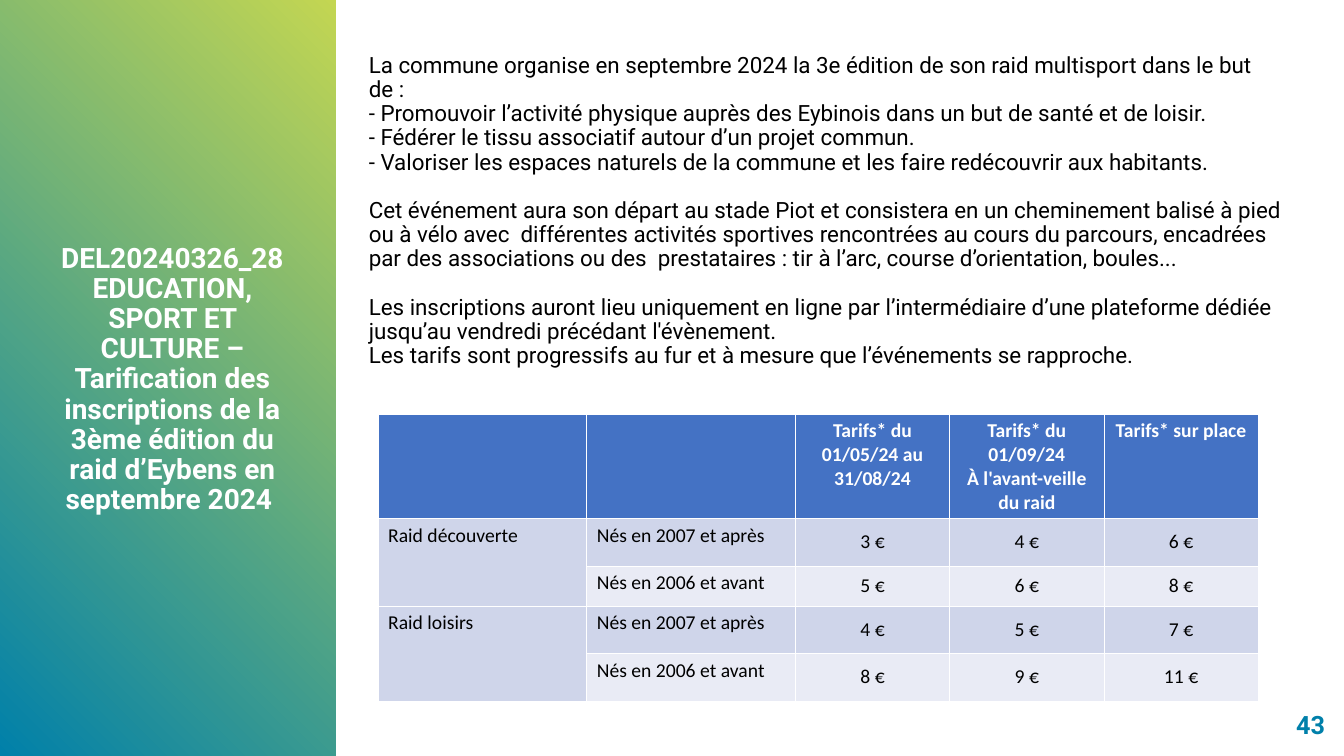
from lxml import etree
from pptx import Presentation
from pptx.dml.color import RGBColor
from pptx.enum.shapes import MSO_SHAPE
from pptx.enum.text import MSO_ANCHOR, PP_ALIGN
from pptx.oxml.ns import qn
from pptx.util import Inches, Pt

LEFT, CENTER, RIGHT = PP_ALIGN.LEFT, PP_ALIGN.CENTER, PP_ALIGN.RIGHT
TOP, MIDDLE = MSO_ANCHOR.TOP, MSO_ANCHOR.MIDDLE

BLUE = RGBColor(0x00, 0x80, 0xAA)
LIME = RGBColor(0xC3, 0xD6, 0x52)
WHITE = RGBColor(0xFF, 0xFF, 0xFF)
BLACK = RGBColor(0x00, 0x00, 0x00)
HEADER_BLUE = RGBColor(0x44, 0x72, 0xC4)
BAND_DARK = RGBColor(0xCF, 0xD5, 0xEA)
BAND_LIGHT = RGBColor(0xE9, 0xEB, 0xF5)

TITLE = ("DEL20240326_28 EDUCATION, SPORT ET CULTURE – Tarification des inscriptions "
         "de la 3ème édition du raid d’Eybens en septembre 2024 ")
PAGE_NUMBER = "43"
SECTIONS = [
    ["La commune organise en septembre 2024 la 3e édition de son raid multisport dans le but de :",
     "- Promouvoir l’activité physique auprès des Eybinois dans un but de santé et de loisir.",
     "- Fédérer le tissu associatif autour d’un projet commun.",
     "- Valoriser les espaces naturels de la commune et les faire redécouvrir aux habitants."],
    ["Cet événement aura son départ au stade Piot et consistera en un cheminement balisé à pied "
     "ou à vélo avec  différentes activités sportives rencontrées au cours du parcours, encadrées "
     "par des associations ou des  prestataires : tir à l’arc, course d’orientation, boules..."],
    ["Les inscriptions auront lieu uniquement en ligne par l’intermédiaire d’une plateforme dédiée "
     "jusqu’au vendredi précédant l'évènement.",
     "Les tarifs sont progressifs au fur et à mesure que l’événements se rapproche."],
]
HEADERS = [[], [], ["Tarifs* du 01/05/24 au 31/08/24"],
           ["Tarifs* du 01/09/24", "À l'avant-veille du raid"], ["Tarifs* sur place"]]
YOUNGER, OLDER = "Nés en 2007 et après", "Nés en 2006 et avant"
PRICES = {
    "Raid découverte": [(YOUNGER, 3, 4, 6), (OLDER, 5, 6, 8)],
    "Raid loisirs": [(YOUNGER, 4, 5, 7), (OLDER, 8, 9, 11)],
}

SLIDE_WIDTH, SLIDE_HEIGHT = 13.33, 7.5
PANEL_WIDTH = SLIDE_WIDTH / 4
LABEL_WIDTH, PRICE_WIDTH = 2.07, 1.53
COLUMN_WIDTHS = [LABEL_WIDTH] * 2 + [PRICE_WIDTH] * 3
ROW_HEIGHTS = [0.98, 0.47, 0.4, 0.47, 0.47]
SECTION_GAP = 17.3


def write(frame, paragraphs, *, size, color, font="Roboto", bold=False, align=LEFT,
          anchor=TOP, line_spacing=None, gaps=()):
    """Fill a text frame; gaps lists the paragraph indexes that open a new section."""
    frame.word_wrap = True
    frame.vertical_anchor = anchor
    for index, text in enumerate(paragraphs):
        paragraph = frame.paragraphs[0] if index == 0 else frame.add_paragraph()
        paragraph.alignment = align
        paragraph.line_spacing = line_spacing
        if index in gaps:
            paragraph.space_before = Pt(SECTION_GAP)
        run = paragraph.add_run()
        run.text = text
        run.font.name, run.font.size, run.font.bold = font, Pt(size), bold
        run.font.color.rgb = color


def add_text(slide, box, paragraphs, **text_format):
    frame = slide.shapes.add_textbox(*map(Inches, box)).text_frame
    write(frame, paragraphs, **text_format)


def add_panel(slide):
    panel = slide.shapes.add_shape(MSO_SHAPE.RECTANGLE, 0, 0, Inches(PANEL_WIDTH), Inches(SLIDE_HEIGHT))
    panel.shadow.inherit = False
    panel.line.fill.background()
    panel.fill.gradient()
    panel.fill.gradient_angle = 45
    for stop, color, position in zip(panel.fill.gradient_stops, (BLUE, LIME), (0, 1)):
        stop.color.rgb = color
        stop.position = position


def style_cell(cell, fill):
    """Give a cell its fill and thin white borders, which precede the fill in the XML."""
    properties = cell._tc.get_or_add_tcPr()
    for side in ("a:lnL", "a:lnR", "a:lnT", "a:lnB"):
        border = etree.SubElement(properties, qn(side), w=str(Pt(0.54)))
        solid = etree.SubElement(border, qn("a:solidFill"))
        etree.SubElement(solid, qn("a:srgbClr"), val=str(WHITE))
    cell.fill.solid()
    cell.fill.fore_color.rgb = fill


def add_prices(slide):
    table = slide.shapes.add_table(
        len(ROW_HEIGHTS), len(COLUMN_WIDTHS), Inches(3.75), Inches(4.11),
        Inches(sum(COLUMN_WIDTHS)), Inches(sum(ROW_HEIGHTS))).table
    for column, width in zip(table.columns, COLUMN_WIDTHS):
        column.width = Inches(width)
    for row, height in zip(table.rows, ROW_HEIGHTS):
        row.height = Inches(height)

    cell_format = dict(font="Calibri", size=14)
    for column, lines in enumerate(HEADERS):
        cell = table.cell(0, column)
        style_cell(cell, HEADER_BLUE)
        write(cell.text_frame, lines, color=WHITE, bold=True, align=CENTER, **cell_format)

    row = 1
    for raid, groups in PRICES.items():
        raid_cell = table.cell(row, 0)
        raid_cell.merge(table.cell(row + len(groups) - 1, 0))
        write(raid_cell.text_frame, [raid], color=BLACK, **cell_format)
        for band, (ages, *prices) in zip((BAND_DARK, BAND_LIGHT), groups):
            style_cell(table.cell(row, 0), BAND_DARK)
            age_cell = table.cell(row, 1)
            style_cell(age_cell, band)
            write(age_cell.text_frame, [ages], color=BLACK, **cell_format)
            for column, price in enumerate(prices, start=2):
                cell = table.cell(row, column)
                style_cell(cell, band)
                write(cell.text_frame, [f"{price} €"], color=BLACK, align=CENTER, **cell_format)
                cell.vertical_anchor = MIDDLE
            row += 1


def main():
    presentation = Presentation()
    presentation.slide_width = Inches(SLIDE_WIDTH)
    presentation.slide_height = Inches(SLIDE_HEIGHT)
    slide = presentation.slides.add_slide(presentation.slide_layouts[6])

    add_panel(slide)
    add_text(slide, (0.37, 2.37, 2.68, 5.1), [TITLE], size=20, color=WHITE, bold=True,
             align=CENTER, line_spacing=0.9)
    lines = [line for section in SECTIONS for line in section]
    openings = [sum(map(len, SECTIONS[:index])) for index in range(1, len(SECTIONS))]
    add_text(slide, (3.56, 0.32, 9.33, 3.55), lines, size=16, color=BLACK,
             anchor=MIDDLE, line_spacing=0.9, gaps=openings)
    add_prices(slide)
    add_text(slide, (9.52, 6.98, 3.72, 0.41), [PAGE_NUMBER], size=18, color=BLUE, bold=True,
             align=RIGHT, anchor=MIDDLE)
    presentation.save("out.pptx")


if __name__ == "__main__":
    main()
